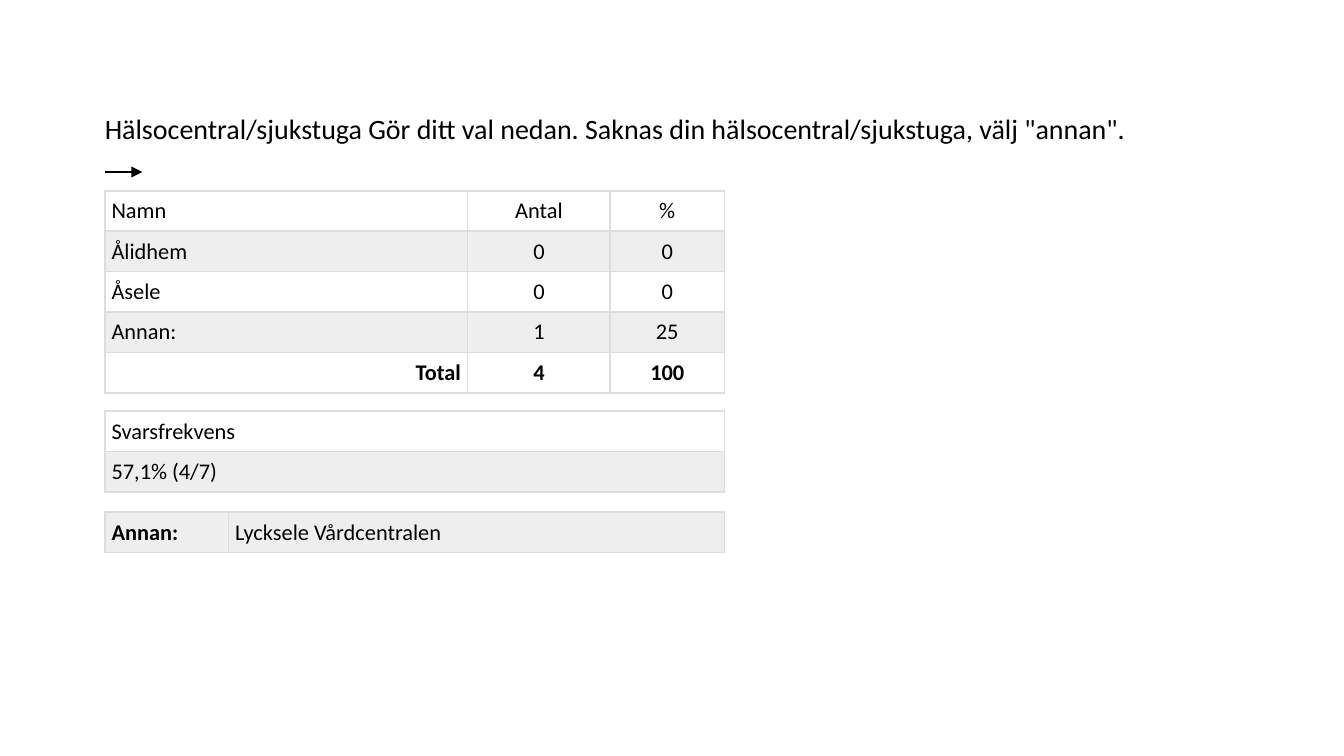
from dataclasses import dataclass

from lxml.etree import SubElement
from pptx import Presentation
from pptx.dml.color import RGBColor
from pptx.enum.shapes import MSO_CONNECTOR
from pptx.enum.text import MSO_ANCHOR, MSO_AUTO_SIZE, PP_ALIGN
from pptx.oxml.ns import qn
from pptx.slide import Slide
from pptx.table import _Cell
from pptx.text.text import _Paragraph
from pptx.util import Inches, Pt

SLIDE_WIDTH = 10
LEFT = 0.78
ROW_HEIGHT = 0.3
CELL_MARGIN = Inches(0.05)
BLACK, WHITE, STRIPE, BORDER = "000000", "FFFFFF", "EEEEEE", "DDDDDD"


@dataclass(frozen=True)
class TableBlock:
    top: float
    column_widths: tuple[float, ...]
    rows: tuple[tuple[str, ...], ...]
    row_fills: tuple[str, ...]
    bold_cells: tuple[tuple[int, int], ...] = ()
    centred_columns: tuple[int, ...] = ()
    right_cells: tuple[tuple[int, int], ...] = ()


TABLES = (
    TableBlock(
        top=1.42,
        column_widths=(2.7, 1.06, 0.85),
        rows=(
            ("Namn", "Antal", "%"),
            ("Ålidhem", "0", "0"),
            ("Åsele", "0", "0"),
            ("Annan:", "1", "25"),
            ("Total", "4", "100"),
        ),
        row_fills=(WHITE, STRIPE, WHITE, STRIPE, WHITE),
        bold_cells=((4, 0), (4, 1), (4, 2)),
        centred_columns=(1, 2),
        right_cells=((4, 0),),
    ),
    TableBlock(
        top=3.06,
        column_widths=(4.61,),
        rows=(("Svarsfrekvens",), ("57,1% (4/7)",)),
        row_fills=(WHITE, STRIPE),
    ),
    TableBlock(
        top=3.81,
        column_widths=(0.92, 3.69),
        rows=(("Annan:", "Lycksele Vårdcentralen"),),
        row_fills=(STRIPE,),
        bold_cells=((0, 0),),
    ),
)


def colour(value: str) -> RGBColor:
    return RGBColor.from_string(value)


def format_runs(paragraph: _Paragraph, size: float, bold: bool = False) -> None:
    for run in paragraph.runs:
        run.font.name = "Calibri"
        run.font.size = Pt(size)
        run.font.bold = bold
        run.font.color.rgb = colour(BLACK)


def add_borders(cell: _Cell) -> None:
    """Draw all four cell sides; call before the fill, which must follow them."""
    properties = cell._tc.get_or_add_tcPr()
    for side in ("a:lnL", "a:lnR", "a:lnT", "a:lnB"):
        line = SubElement(properties, qn(side), w=str(Pt(1)))
        fill = SubElement(line, qn("a:solidFill"))
        SubElement(fill, qn("a:srgbClr"), val=BORDER)


def add_heading(slide: Slide, text: str) -> None:
    box = slide.shapes.add_textbox(Inches(LEFT), Inches(0.78), Inches(8.46), Inches(0.35))
    frame = box.text_frame
    frame.word_wrap = True
    frame.auto_size = MSO_AUTO_SIZE.SHAPE_TO_FIT_TEXT
    frame.vertical_anchor = MSO_ANCHOR.MIDDLE
    frame.margin_left = frame.margin_right = 0
    frame.text = text
    format_runs(frame.paragraphs[0], 15)


def add_arrow(slide: Slide) -> None:
    arrow = slide.shapes.add_connector(
        MSO_CONNECTOR.STRAIGHT, Inches(LEFT), Inches(1.28), Inches(1.06), Inches(1.28)
    )
    arrow.line.color.rgb = colour(BLACK)
    arrow.line.width = Pt(0.75)
    SubElement(arrow.line._get_or_add_ln(), qn("a:tailEnd"), type="triangle")
    SubElement(arrow._element.spPr, qn("a:effectLst"))


def add_table(slide: Slide, block: TableBlock) -> None:
    table = slide.shapes.add_table(
        len(block.rows),
        len(block.column_widths),
        Inches(LEFT),
        Inches(block.top),
        Inches(sum(block.column_widths)),
        Inches(ROW_HEIGHT * len(block.rows)),
    ).table
    table.first_row = table.horz_banding = False
    for column, width in zip(table.columns, block.column_widths):
        column.width = Inches(width)
    for row_index, (texts, fill) in enumerate(zip(block.rows, block.row_fills)):
        table.rows[row_index].height = Inches(ROW_HEIGHT)
        for column_index, text in enumerate(texts):
            position = (row_index, column_index)
            cell = table.cell(*position)
            cell.margin_left = cell.margin_right = CELL_MARGIN
            cell.margin_top = cell.margin_bottom = CELL_MARGIN
            add_borders(cell)
            cell.fill.solid()
            cell.fill.fore_color.rgb = colour(fill)
            cell.text_frame.text = text
            paragraph = cell.text_frame.paragraphs[0]
            if position in block.right_cells:
                paragraph.alignment = PP_ALIGN.RIGHT
            elif column_index in block.centred_columns:
                paragraph.alignment = PP_ALIGN.CENTER
            format_runs(paragraph, 12, position in block.bold_cells)


def main() -> None:
    presentation = Presentation()
    presentation.slide_width = Inches(SLIDE_WIDTH)
    presentation.slide_height = Inches(SLIDE_WIDTH * 9 / 16)
    slide = presentation.slides.add_slide(presentation.slide_layouts[6])
    add_heading(
        slide,
        'Hälsocentral/sjukstuga Gör ditt val nedan. Saknas din hälsocentral/sjukstuga, välj "annan".',
    )
    add_arrow(slide)
    for block in TABLES:
        add_table(slide, block)
    presentation.save("out.pptx")


if __name__ == "__main__":
    main()
